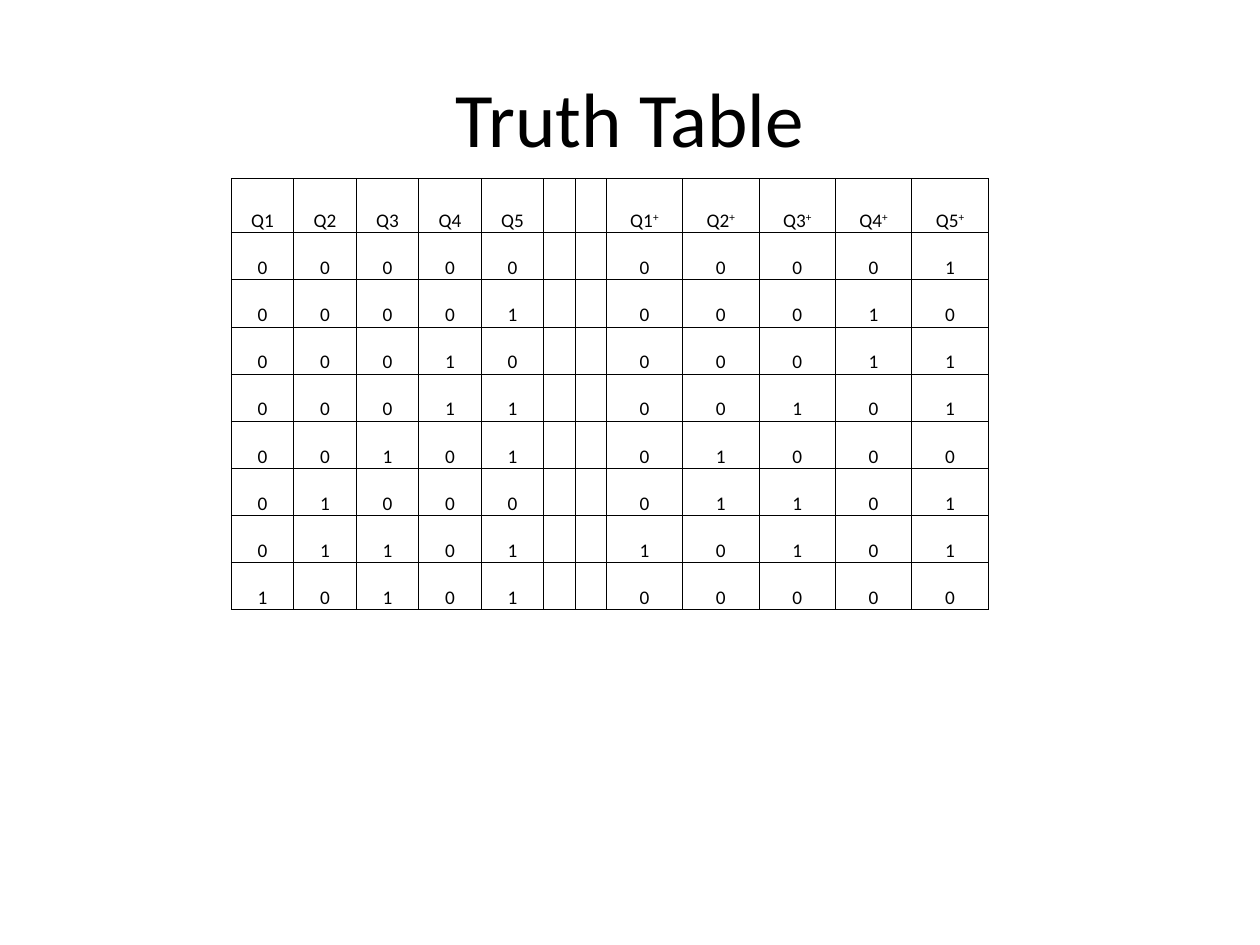
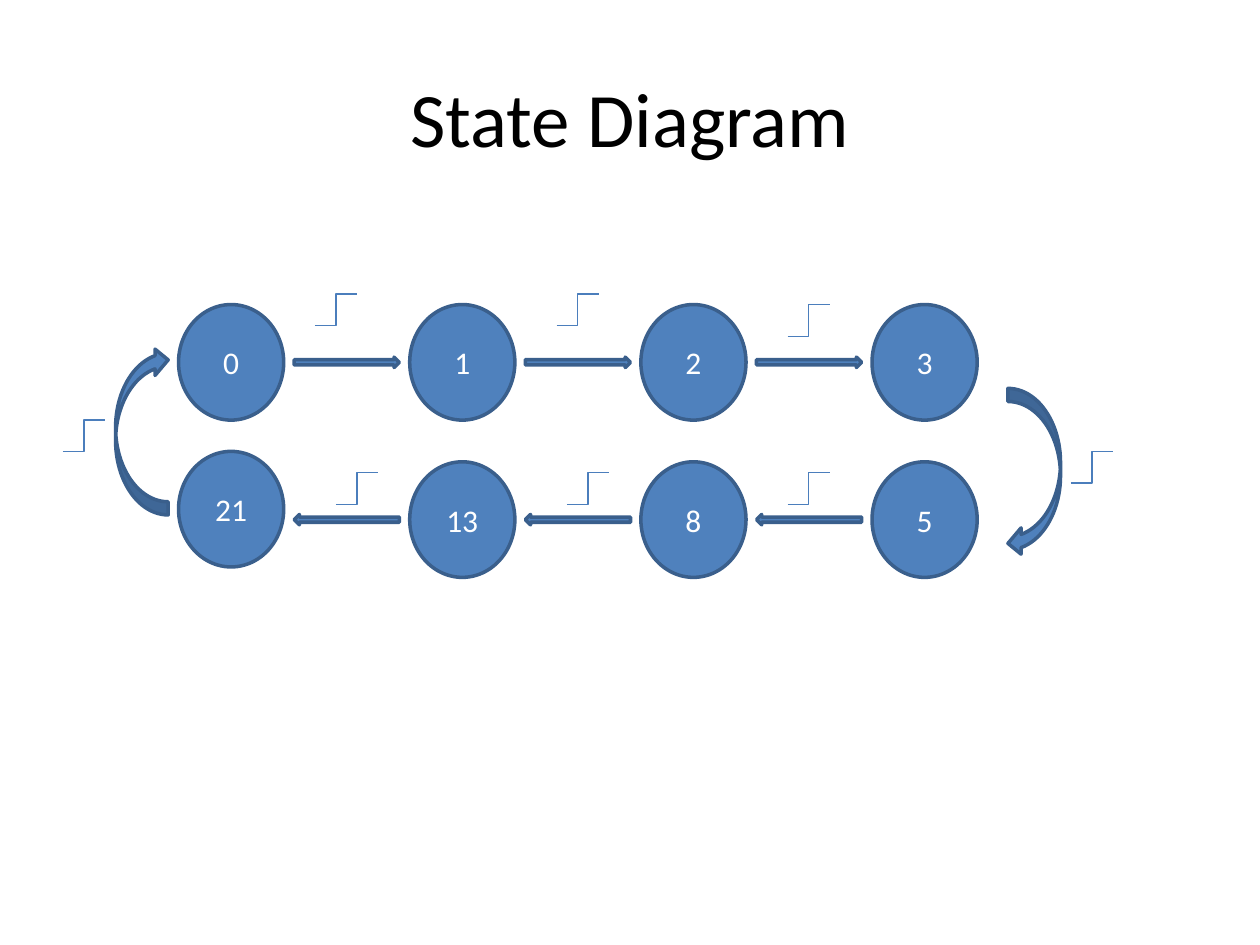
"""Build a truth table slide and a state diagram slide."""
from lxml.etree import SubElement
from pptx import Presentation
from pptx.dml.color import RGBColor
from pptx.enum.shapes import MSO_CONNECTOR, MSO_SHAPE
from pptx.enum.text import MSO_ANCHOR, PP_ALIGN
from pptx.oxml.ns import qn
from pptx.util import Cm, Pt

FONT = "Calibri"
BLACK, WHITE = "000000", "FFFFFF"
BLUE, OUTLINE, PULSE = "4F81BD", "3A5F8C", "4B7EBC"

COL_WIDTHS = [1.26] * 5 + [0.63] * 2 + [1.54] * 5
ROW_HEIGHTS = [1.09] + [0.95] * 8
CELL_FORMAT = {"vertical_anchor": MSO_ANCHOR.BOTTOM, "margin_left": Cm(0.02),
               "margin_right": Cm(0.02), "margin_top": Cm(0.02), "margin_bottom": 0}
TRANSITIONS = [("00000", "00001"), ("00001", "00010"), ("00010", "00011"),
               ("00011", "00101"), ("00101", "01000"), ("01000", "01101"),
               ("01101", "10101"), ("10101", "00000")]

STATE_LEFT, STATE_PITCH = 3.6, 4.66
STATE_W, STATE_H = 2.12, 2.33
ARROW_LEFT, ARROW_H = 5.93, 0.21
TOP_Y, BOTTOM_Y, LAST_Y = 6.14, 9.31, 9.1
PULSE_W, PULSE_H = 0.85, 0.64
PULSES = [(6.35, 5.93), (11.22, 5.93), (15.88, 6.14), (21.59, 9.1),
          (15.88, 9.53), (11.43, 9.53), (6.77, 9.53), (1.27, 8.47)]


def rgb(value):
    """Return the colour for a hex string."""
    return RGBColor.from_string(value)


def set_attrs(obj, values):
    """Set every attribute named in a dict."""
    for name, value in values.items():
        setattr(obj, name, value)


def add_run(p, text, size, color):
    """Append a formatted run to a paragraph."""
    r = p.add_run()
    r.text = text
    set_attrs(r.font, {"name": FONT, "size": Pt(size)})
    r.font.color.rgb = rgb(color)
    return r


def add_titled_slide(prs, title):
    """Add a title-only slide with its title formatted."""
    s = prs.slides.add_slide(prs.slide_layouts[5])
    sp = s.shapes.title
    set_attrs(sp, {"left": Cm(1.27), "top": Cm(0.76),
                   "width": Cm(22.86), "height": Cm(3.18)})
    sp.text_frame.vertical_anchor = MSO_ANCHOR.MIDDLE
    p = sp.text_frame.paragraphs[0]
    p.alignment = PP_ALIGN.CENTER
    add_run(p, title, 44, BLACK)
    return s


def add_borders(cell):
    """Draw a thin black line on all sides of a cell."""
    tc_pr = cell._tc.get_or_add_tcPr()
    for side in ("a:lnL", "a:lnR", "a:lnT", "a:lnB"):
        ln = SubElement(tc_pr, qn(side), w=str(Pt(0.5)))
        fill = SubElement(ln, qn("a:solidFill"))
        SubElement(fill, qn("a:srgbClr"), val=BLACK)


def fill_cell(cell, text):
    """Format a cell and write its text, raising a closing plus."""
    set_attrs(cell, CELL_FORMAT)
    add_borders(cell)
    cell.fill.background()
    p = cell.text_frame.paragraphs[0]
    p.alignment = PP_ALIGN.CENTER
    if text:
        add_run(p, text.rstrip("+"), 11, BLACK)
    if text.endswith("+"):
        r = add_run(p, "+", 11, BLACK)
        r._r.get_or_add_rPr().set("baseline", "30000")


def add_truth_table(s):
    """Add the table of present and next states."""
    names = [f"Q{n}" for n in range(1, 6)]
    gap = ["", ""]
    rows = [names + gap + [f"{name}+" for name in names]]
    rows += [[*now, *gap, *after] for now, after in TRANSITIONS]
    table = s.shapes.add_table(len(rows), len(COL_WIDTHS), Cm(4.66), Cm(3.6),
                               Cm(sum(COL_WIDTHS)), Cm(sum(ROW_HEIGHTS))).table
    set_attrs(table, {"first_row": False, "horz_banding": False})
    for col, width in zip(table.columns, COL_WIDTHS):
        col.width = Cm(width)
    for row, height, texts in zip(table.rows, ROW_HEIGHTS, rows):
        row.height = Cm(height)
        for cell, text in zip(row.cells, texts):
            fill_cell(cell, text)


def add_blue_shape(s, kind, left, top, width, height, rotation=0):
    """Add a blue outlined preset shape."""
    sp = s.shapes.add_shape(kind, Cm(left), Cm(top), Cm(width), Cm(height))
    sp.rotation = rotation
    sp.shadow.inherit = False
    sp.fill.solid()
    sp.fill.fore_color.rgb = rgb(BLUE)
    sp.line.color.rgb = rgb(OUTLINE)
    sp.line.width = Pt(2)
    return sp


def add_state(s, label, col, top):
    """Add a numbered state circle in a column."""
    sp = add_blue_shape(s, MSO_SHAPE.OVAL, STATE_LEFT + col * STATE_PITCH, top,
                        STATE_W, STATE_H)
    tf = sp.text_frame
    tf.vertical_anchor = MSO_ANCHOR.MIDDLE
    p = tf.paragraphs[0]
    p.alignment = PP_ALIGN.CENTER
    add_run(p, label, 18, WHITE)


def add_state_row(s, labels, top, rotation, first_top):
    """Add a row of states with the arrows between them."""
    for col, label in enumerate(labels):
        add_state(s, label, col, top if col else first_top)
    for col in range(len(labels) - 1):
        add_blue_shape(s, MSO_SHAPE.RIGHT_ARROW, ARROW_LEFT + col * STATE_PITCH,
                       top + 1.06, STATE_W, ARROW_H, rotation)


def add_pulse(s, left, top):
    """Add a rising clock edge."""
    c = s.shapes.add_connector(MSO_CONNECTOR.ELBOW, Cm(left), Cm(top + PULSE_H),
                               Cm(left + PULSE_W), Cm(top))
    c.line.color.rgb = rgb(PULSE)
    c.line.width = Pt(0.75)
    SubElement(c._element.spPr, qn("a:effectLst"))


def add_state_diagram(s):
    """Add the loop of states, its arrows and clock edges."""
    add_state_row(s, ["0", "1", "2", "3"], TOP_Y, 0, TOP_Y)
    add_state_row(s, ["21", "13", "8", "5"], BOTTOM_Y, 180, LAST_Y)
    for left, top, rotation in ((2.33, 6.99, 180), (20.32, 7.83, 0)):
        add_blue_shape(s, MSO_SHAPE.CURVED_LEFT_ARROW, left, top, 1.06, 3.39, rotation)
    for left, top in PULSES:
        add_pulse(s, left, top)


def main():
    """Build and save the slides."""
    prs = Presentation()
    set_attrs(prs, {"slide_width": Cm(25.4), "slide_height": Cm(19.05)})
    add_truth_table(add_titled_slide(prs, "Truth Table"))
    add_state_diagram(add_titled_slide(prs, "State Diagram"))
    prs.save("out.pptx")


if __name__ == "__main__":
    main()
